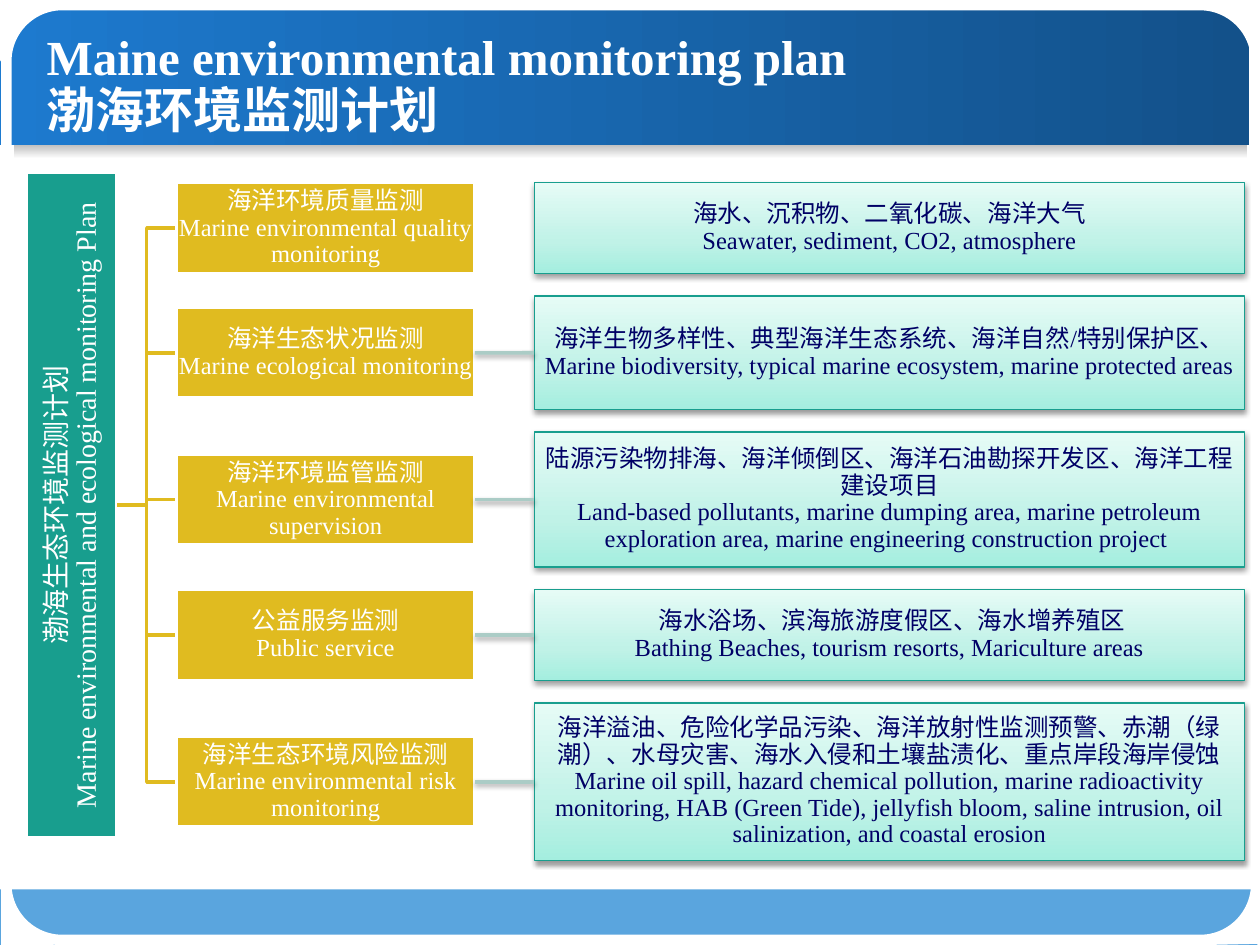
import copy
from dataclasses import dataclass

import pptx
import pptx.dml.color
import pptx.enum.shapes
import pptx.enum.text
import pptx.oxml
import pptx.oxml.ns
import pptx.util

Inches, Pt = pptx.util.Inches, pptx.util.Pt
RGBColor = pptx.dml.color.RGBColor
MSO_SHAPE = pptx.enum.shapes.MSO_SHAPE
MSO_CONNECTOR = pptx.enum.shapes.MSO_CONNECTOR
PP_ALIGN = pptx.enum.text.PP_ALIGN
qn = pptx.oxml.ns.qn

WHITE = RGBColor(0xFF, 0xFF, 0xFF)
SILVER = RGBColor(0xC0, 0xC0, 0xC0)
BLUE = RGBColor(0x1D, 0x7A, 0xCF)
DARK_BLUE = RGBColor(0x13, 0x51, 0x8A)
SKY = RGBColor(0x5A, 0xA5, 0xDE)
NAVY = RGBColor(0x00, 0x00, 0x66)
TEAL = RGBColor(0x18, 0x9E, 0x8E)
GOLD = RGBColor(0xE0, 0xBB, 0x20)
LINK = RGBColor(0xAB, 0xCC, 0xC6)
MINT = [(0, RGBColor(0xA4, 0xEE, 0xDF)), (0.35, RGBColor(0xC0, 0xF2, 0xE7)),
        (1, RGBColor(0xE6, 0xFB, 0xF6))]

FONT = "Times New Roman"
TOP, GAP = 1.45, 0.18
TOPIC_X, TOPIC_W, TOPIC_H = 1.4, 2.37, 0.72
DETAIL_X, DETAIL_W = 4.24, 5.64
SPINE_X, SPINE_Y, SPINE_LEN = 0.57, 4.01, 5.28


@dataclass
class Row:
    height: float
    topic: list[str]
    detail: list[str]
    spacing: object = 0.9


ROWS = [
    Row(0.72, ["海洋环境质量监测", "Marine environmental quality monitoring"],
        ["海水、沉积物、二氧化碳、海洋大气", "Seawater, sediment, CO2, atmosphere"]),
    Row(0.9, ["海洋生态状况监测", "Marine ecological monitoring"],
        ["海洋生物多样性、典型海洋生态系统、海洋自然/特别保护区、"
         "Marine biodiversity, typical marine ecosystem, marine protected areas"], Pt(15)),
    Row(1.07, ["海洋环境监管监测", "Marine environmental supervision"],
        ["陆源污染物排海、海洋倾倒区、海洋石油勘探开发区、海洋工程建设项目",
         "Land-based pollutants, marine dumping area, marine petroleum exploration area, "
         "marine engineering construction project "]),
    Row(0.72, ["公益服务监测", "Public service"],
        [" 海水浴场、滨海旅游度假区、海水增养殖区",
         "Bathing Beaches, tourism resorts, Mariculture areas"]),
    Row(1.25, ["海洋生态环境风险监测", "Marine environmental risk monitoring"],
        ["海洋溢油、危险化学品污染、海洋放射性监测预警、赤潮（绿潮）、水母灾害、"
         "海水入侵和土壤盐渍化、重点岸段海岸侵蚀",
         "Marine oil spill, hazard chemical pollution, marine radioactivity monitoring, "
         "HAB (Green Tide), jellyfish bloom, saline intrusion, oil salinization, "
         "and coastal erosion"]),
]

# White slide corners, in hundredths of an inch
CORNERS = [
    [(0, 49), (14, 25), (29, 6), (50, 0), (0, 0)],
    [(43, 750), (22, 733), (6, 717), (1, 692), (1, 750)],
    [(1000, 699), (988, 724), (975, 743), (957, 750), (1001, 749)],
    [(950, 0), (975, 14), (994, 29), (1000, 50), (1000, 0)],
]


def set_gradient(sp, stops: list, angle: float) -> None:
    """Fill with any number of stops; the angle runs counter-clockwise."""
    sp.fill.gradient()
    gs_list = sp._element.spPr.find(".//" + qn("a:gsLst"))
    for _ in stops[2:]:
        gs_list.append(copy.deepcopy(gs_list[-1]))
    for stop, (position, color) in zip(sp.fill.gradient_stops, stops):
        stop.position, stop.color.rgb = position, color
    sp.fill.gradient_angle = angle


def set_effects(sp, shadow: bool) -> None:
    """Give a soft shadow below, or an empty effect list."""
    ns = pptx.oxml.ns.nsdecls("a")
    inner = ('<a:outerShdw blurRad="40000" dist="20000" dir="5400000" rotWithShape="0">'
             '<a:srgbClr val="000000"><a:alpha val="38000"/></a:srgbClr></a:outerShdw>')
    sp._element.spPr.append(pptx.oxml.parse_xml(
        f"<a:effectLst {ns}>{inner if shadow else ''}</a:effectLst>"))


def add_box(s, x: float, y: float, w: float, h: float, fill=None, line=None,
            width: float = 2, kind=MSO_SHAPE.RECTANGLE, shadow: bool = False,
            angle: float = 90):
    """Add a shape; fill is a colour, a list of gradient stops, or None."""
    sp = s.shapes.add_shape(kind, Inches(x), Inches(y), Inches(w), Inches(h))
    if fill is None:
        sp.fill.background()
    elif isinstance(fill, list):
        set_gradient(sp, fill, angle)
    else:
        sp.fill.solid()
        sp.fill.fore_color.rgb = fill
    if line is None:
        sp.line.fill.background()
    else:
        sp.line.color.rgb = line
        sp.line.width = Pt(width)
    set_effects(sp, shadow)
    return sp


def write(sp, lines: list[str], color: RGBColor, size: float = 14, spacing=0.9) -> None:
    tf = sp.text_frame
    for side in ("left", "top", "right", "bottom"):
        setattr(tf, f"margin_{side}", Inches(0.01))
    tf.word_wrap = True
    tf.vertical_anchor = pptx.enum.text.MSO_ANCHOR.MIDDLE
    tf.text = "\n".join(lines)
    for p in tf.paragraphs:
        p.alignment = PP_ALIGN.CENTER
        p.line_spacing = spacing
        format_runs(p, {"name": FONT, "size": Pt(size)}, color)


def format_runs(p, font: dict, color: RGBColor) -> None:
    for r in p.runs:
        for key, value in font.items():
            setattr(r.font, key, value)
        r.font.color.rgb = color


def add_line(s, kind, x1: float, y1: float, x2: float, y2: float, color: RGBColor,
             shadow: bool = False):
    c = s.shapes.add_connector(kind, Inches(x1), Inches(y1), Inches(x2), Inches(y2))
    c.line.color.rgb = color
    c.line.width = Pt(2)
    set_effects(c, shadow)
    return c


def add_background(s) -> None:
    add_box(s, 0, 0.01, 9.91, 1.14, [(0, BLUE), (1, DARK_BLUE)], angle=0)
    add_box(s, 0, 7.06, 9.98, 0.44, SKY)
    add_box(s, 0.11, 1.15, 9.79, 0.11, [(0, SILVER), (1, WHITE)], angle=270)
    frame = add_box(s, 0.05, 0.04, 9.92, 7.42, line=WHITE, width=6,
                    kind=MSO_SHAPE.ROUNDED_RECTANGLE)
    frame.adjustments[0] = 0.06
    for points in CORNERS:
        builder = s.shapes.build_freeform(*points[0], scale=Inches(0.01))
        builder.add_line_segments(points[1:], close=True)
        corner = builder.convert_to_shape()
        corner.fill.solid()
        corner.fill.fore_color.rgb = WHITE
        corner.line.fill.background()
        corner.shadow.inherit = False


def add_title(s) -> None:
    title = s.shapes.title
    s.shapes._spTree.append(title._element)  # in front of the header band
    place = {"left": 0.27, "top": 0.21, "width": 9.27, "height": 0.94}
    for key, value in place.items():
        setattr(title, key, Inches(value))
    tf = title.text_frame
    tf.auto_size = pptx.enum.text.MSO_AUTO_SIZE.NONE
    tf.vertical_anchor = pptx.enum.text.MSO_ANCHOR.MIDDLE
    tf.text = "Maine environmental monitoring plan\v渤海环境监测计划"
    p = tf.paragraphs[0]
    p.alignment = PP_ALIGN.LEFT
    p.line_spacing = Pt(30)
    format_runs(p, {"name": FONT, "size": Pt(28), "bold": True}, WHITE)


def add_plan(s) -> None:
    spine = add_box(s, SPINE_X - SPINE_LEN / 2, SPINE_Y - TOPIC_H / 2, SPINE_LEN, TOPIC_H,
                    TEAL, WHITE)
    spine.rotation = 270
    write(spine, ["渤海生态环境监测计划", "Marine environmental and ecological monitoring Plan"],
          WHITE, 16, Pt(17))
    y = TOP
    for i, row in enumerate(ROWS):
        middle = y + row.height / 2
        add_line(s, MSO_CONNECTOR.ELBOW, SPINE_X + TOPIC_H / 2, SPINE_Y, TOPIC_X, middle, GOLD)
        topic = add_box(s, TOPIC_X, middle - TOPIC_H / 2, TOPIC_W, TOPIC_H, GOLD, WHITE)
        write(topic, row.topic, WHITE)
        detail = add_box(s, DETAIL_X, y, DETAIL_W, row.height, MINT, TEAL, 0.75, shadow=True)
        write(detail, row.detail, NAVY, spacing=row.spacing)
        if i > 0:
            link = add_line(s, MSO_CONNECTOR.STRAIGHT, TOPIC_X + TOPIC_W, middle,
                            DETAIL_X, middle, LINK, shadow=True)
            link.begin_connect(topic, 3)
            link.end_connect(detail, 1)
        y += row.height + GAP


def main() -> None:
    prs = pptx.Presentation()
    prs.slide_width, prs.slide_height = Inches(10), Inches(7.5)
    s = prs.slides.add_slide(prs.slide_layouts[5])
    add_background(s)
    add_plan(s)
    add_title(s)
    prs.save("out.pptx")


if __name__ == "__main__":
    main()
